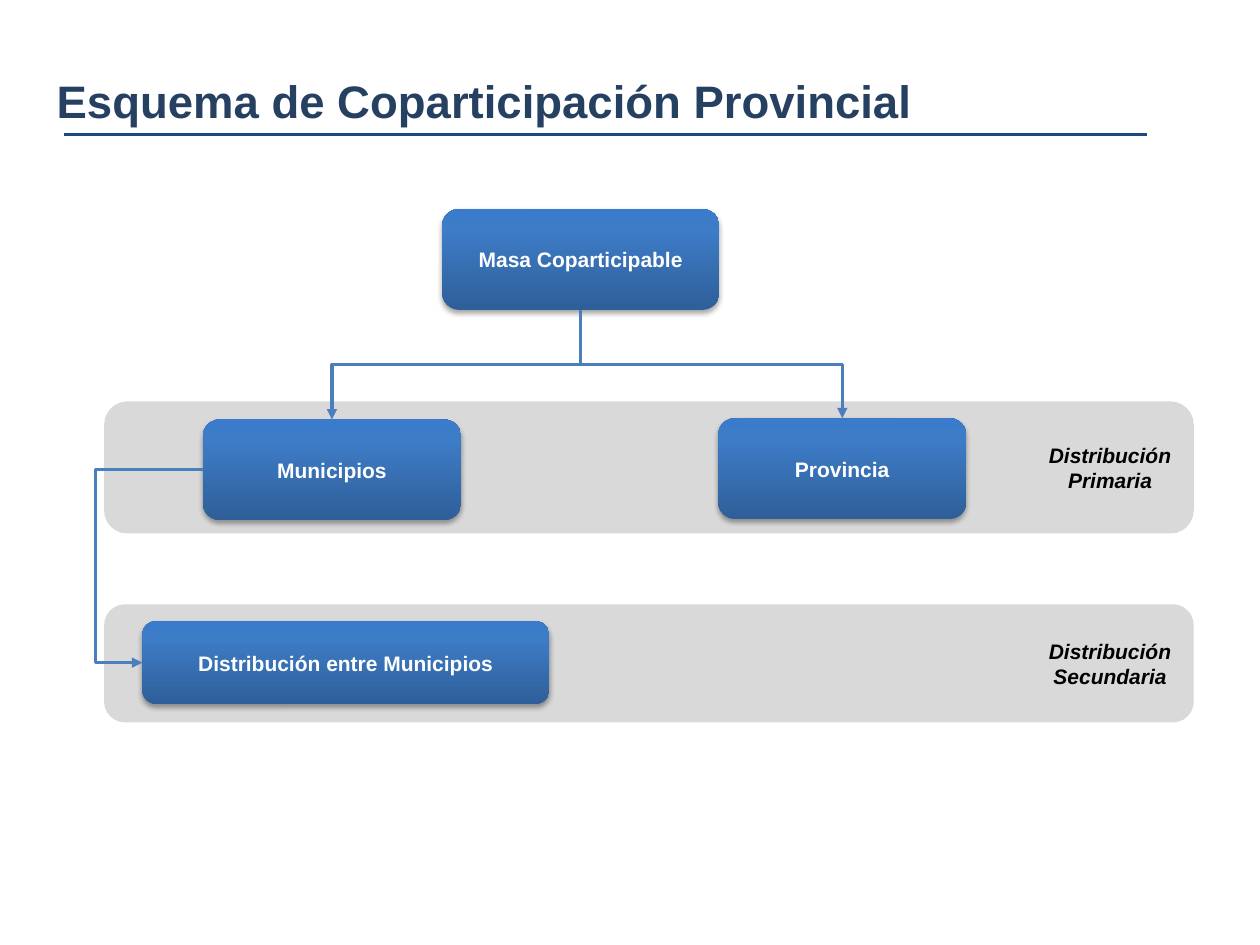
from copy import deepcopy
from dataclasses import dataclass

from lxml import etree
from pptx import Presentation
from pptx.dml.color import RGBColor
from pptx.enum.shapes import MSO_CONNECTOR, MSO_SHAPE
from pptx.enum.text import MSO_ANCHOR, PP_ALIGN
from pptx.oxml.ns import qn
from pptx.util import Inches, Pt

ROUNDED = MSO_SHAPE.ROUNDED_RECTANGLE
STRAIGHT, ELBOW = MSO_CONNECTOR.STRAIGHT, MSO_CONNECTOR.ELBOW
MIDDLE, BOTTOM = MSO_ANCHOR.MIDDLE, MSO_ANCHOR.BOTTOM
LEFT, CENTER = PP_ALIGN.LEFT, PP_ALIGN.CENTER
TITLE_ONLY = 5


@dataclass(frozen=True)
class Theme:
    font: str = "Arial"
    title: str = "254061"
    rule: str = "1F497D"
    band: str = "D9D9D9"
    arrow: str = "4B7EBC"
    box_text: str = "FFFFFF"
    label: str = "000000"
    shadow: str = "000000"
    gradient: tuple = ((0, "2F5F99"), (0.8, "3D7CC7"), (1, "3A7CCB"))
    title_size: int = 26
    text_size: int = 12


THEME = Theme()


def color(value):
    return RGBColor.from_string(value)


def place(box):
    return [Inches(length) for length in box]


def write(shape, text, size, text_color, align=CENTER, anchor=MIDDLE, italic=False):
    text_frame = shape.text_frame
    text_frame.text = text
    text_frame.word_wrap = True
    text_frame.vertical_anchor = anchor
    paragraph = text_frame.paragraphs[0]
    paragraph.alignment = align
    font = paragraph.runs[0].font
    font.name, font.size = THEME.font, Pt(size)
    font.bold, font.italic = True, italic
    font.color.rgb = color(text_color)


def add_line(slide, kind, start, end, line_color, width):
    line = slide.shapes.add_connector(kind, *place(start), *place(end))
    line.line.color.rgb = color(line_color)
    line.line.width = Pt(width)
    etree.SubElement(line._element.spPr, qn("a:effectLst"))
    return line


def add_title(slide, box, text):
    """Title with a rule just under its box."""
    left, top, width, height = box
    title = slide.shapes.title
    title.left, title.top, title.width, title.height = place(box)
    write(title, text, THEME.title_size, THEME.title, LEFT, BOTTOM)
    rule_y = top + height + 0.01
    add_line(slide, STRAIGHT, (left + 0.16, rule_y), (left + width - 0.07, rule_y),
             THEME.rule, 1.5)


def add_band(slide, box, label):
    """Grey level with its name at the right end."""
    left, top, width, height = box
    band = slide.shapes.add_shape(ROUNDED, *place(box))
    band.shadow.inherit = False
    band.fill.solid()
    band.fill.fore_color.rgb = color(THEME.band)
    band.line.color.rgb = color(THEME.band)
    band.line.width = Pt(2)
    label_box = (left + width - 1.34, top + (height - 0.51) / 2, 1.38, 0.51)
    text_box = slide.shapes.add_textbox(*place(label_box))
    write(text_box, label, THEME.text_size, THEME.label, italic=True)


def add_box(slide, box, text):
    """Blue node with a gradient and a soft shadow."""
    shape = slide.shapes.add_shape(ROUNDED, *place(box))
    shape.line.fill.background()
    shape.fill.gradient()
    shape.fill.gradient_angle = 90
    stop_list = shape._element.spPr.find(qn("a:gradFill")).find(qn("a:gsLst"))
    stop_list.append(deepcopy(stop_list[-1]))
    for stop, (position, value) in zip(shape.fill.gradient_stops, THEME.gradient):
        stop.position = position
        stop.color.rgb = color(value)

    shape.shadow.inherit = False
    effects = shape._element.spPr.find(qn("a:effectLst"))
    shadow = etree.SubElement(effects, qn("a:outerShdw"), blurRad=str(Pt(3.1)),
                              dist=str(Pt(1.8)), dir="5400000", rotWithShape="0")
    shadow_color = etree.SubElement(shadow, qn("a:srgbClr"), val=THEME.shadow)
    etree.SubElement(shadow_color, qn("a:alpha"), val="35000")

    write(shape, text, THEME.text_size, THEME.box_text)
    shape.text_frame.margin_left = shape.text_frame.margin_right = Inches(0.04)


def add_arrow(slide, start, end, bend=0.5):
    """Elbow arrow; bend is the turn's place along the first direction."""
    arrow = add_line(slide, ELBOW, start, end, THEME.arrow, 1.75)
    etree.SubElement(arrow.line._get_or_add_ln(), qn("a:tailEnd"), type="triangle")
    guides = arrow._element.spPr.find(qn("a:prstGeom")).get_or_add_avLst()
    etree.SubElement(guides, qn("a:gd"), name="adj1", fmla=f"val {round(bend * 100000)}")
    return arrow


def add_down_arrow(slide, start, end):
    """Elbow arrow that leaves downwards: a turned elbow about the same centre."""
    (x1, y1), (x2, y2) = start, end
    width, height = y2 - y1, abs(x2 - x1)
    left, top = (x1 + x2 - width) / 2, (y1 + y2 - height) / 2
    arrow = add_arrow(slide, (left, top), (left + width, top + height))
    transform = arrow._element.spPr.find(qn("a:xfrm"))
    if x2 < x1:
        transform.set("rot", "5400000")
    else:
        transform.set("rot", "16200000")
        transform.set("flipH", "1")


def top_center(box):
    return box[0] + box[2] / 2, box[1]


def left_center(box):
    return box[0], box[1] + box[3] / 2


def add_scheme(slide, box):
    """Flow from the shared pool to both levels of distribution."""
    left, top, width, _ = box
    primary = (left, top + 1.54, width, 1.02)
    secondary = (left, top + 3.15, width, 0.91)
    pool = (left + 2.67, top, 2.2, 0.8)
    towns = (left + 0.77, top + 1.67, 2.05, 0.8)
    province = (left + 4.86, top + 1.66, 1.97, 0.8)
    among_towns = (left + 0.29, top + 3.27, 3.23, 0.66)

    add_band(slide, secondary, "Distribución Secundaria")
    add_band(slide, primary, "Distribución Primaria")
    for node, text in ((pool, "Masa Coparticipable"), (province, "Provincia"),
                       (towns, "Municipios"),
                       (among_towns, "Distribución entre Municipios")):
        add_box(slide, node, text)

    pool_x, pool_top = top_center(pool)
    for target in (towns, province):
        add_down_arrow(slide, (pool_x, pool_top + pool[3]), top_center(target))
    add_arrow(slide, left_center(towns), left_center(among_towns), bend=1.78)


def main():
    presentation = Presentation()
    presentation.slide_width, presentation.slide_height = Inches(10), Inches(7.5)
    slide = presentation.slides.add_slide(presentation.slide_layouts[TITLE_ONLY])
    add_title(slide, (0.35, 0.52, 8.82, 0.54), "Esquema de Coparticipación Provincial")
    add_scheme(slide, (0.84, 1.66, 8.62, 4.06))
    presentation.save("out.pptx")


if __name__ == "__main__":
    main()
